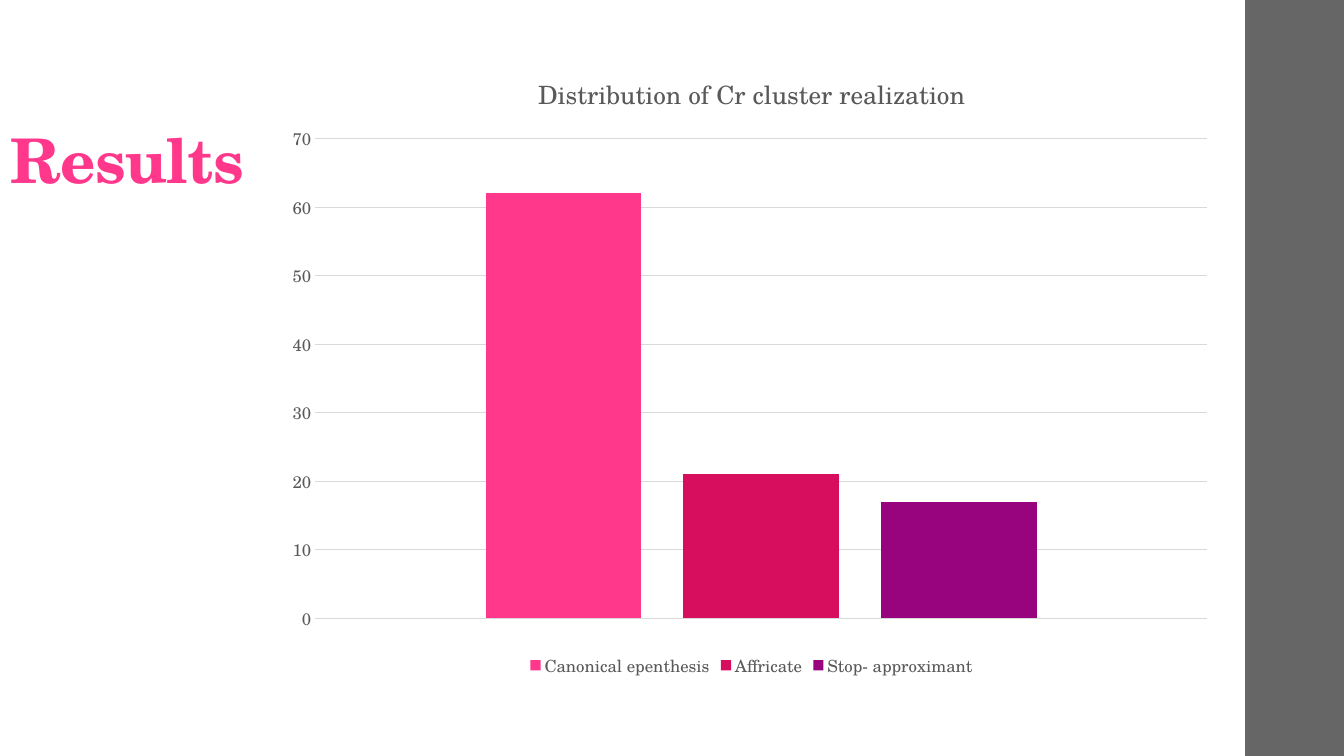
from lxml import etree
from pptx import Presentation
from pptx.chart.data import CategoryChartData
from pptx.dml.color import RGBColor
from pptx.enum.chart import XL_CHART_TYPE, XL_LEGEND_POSITION, XL_TICK_MARK
from pptx.enum.shapes import MSO_SHAPE
from pptx.enum.text import MSO_ANCHOR, MSO_AUTO_SIZE, PP_ALIGN
from pptx.oxml.ns import qn
from pptx.util import Inches, Pt

COLUMNS = XL_CHART_TYPE.COLUMN_CLUSTERED
LEGEND_BOTTOM = XL_LEGEND_POSITION.BOTTOM
NO_TICKS = XL_TICK_MARK.NONE
RECTANGLE = MSO_SHAPE.RECTANGLE

TITLE = "Results"
CHART_TITLE = "Distribution of Cr cluster realization"
CATEGORY = "1"
REALIZATIONS = [
    ("Canonical epenthesis", 62, "FF388C"),
    ("Affricate", 21, "D70D5E"),
    ("Stop- approximant", 17, "98037E"),
]

THEME = {
    "font": "TeX Gyre Schola",
    "title": "FF388C", "text": "595959", "grid": "D9D9D9", "sidebar": "666666",
    "title_size": 44, "chart_title_size": 18, "label_size": 12,
}
SLIDE_SIZE = (13.33, 7.5)
TITLE_BOX = (0, 0.44, 2.89, 1.56)
CHART_BOX = (2.75, 0.5, 9.41, 6.26)
SIDEBAR_BOX = (12.35, 0, 0.98, 7.5)
PLOT_SHARE = {"x": 0.04, "y": 0.14, "w": 0.94, "h": 0.76}  # fractions of the chart


def color(value):
    return RGBColor.from_string(value)


def set_format(target, formats):
    for name, value in formats.items():
        setattr(target, name, value)


def style_font(font, size, ink, bold=False):
    set_format(font, {"name": THEME["font"], "size": Pt(size), "bold": bold})
    font.color.rgb = color(ink)


def add_sidebar(page):
    sidebar = page.shapes.add_shape(RECTANGLE, *map(Inches, SIDEBAR_BOX))
    sidebar.shadow.inherit = False
    sidebar.fill.solid()
    sidebar.fill.fore_color.rgb = color(THEME["sidebar"])
    sidebar.line.fill.background()


def add_title(page):
    title = page.shapes.title
    sides = ("left", "top", "width", "height")
    set_format(title, dict(zip(sides, map(Inches, TITLE_BOX))))
    frame = title.text_frame
    set_format(frame, {
        "word_wrap": True, "auto_size": MSO_AUTO_SIZE.NONE,
        "vertical_anchor": MSO_ANCHOR.BOTTOM,
        "margin_left": Inches(0.1), "margin_right": Inches(0.1),
        "margin_top": Inches(0.03), "margin_bottom": Inches(0.05),
    })
    para = frame.paragraphs[0]
    set_format(para, {"alignment": PP_ALIGN.LEFT, "line_spacing": 0.9})
    span = para.add_run()
    span.text = TITLE
    style_font(span.font, THEME["title_size"], THEME["title"], bold=True)
    span.font._element.set("spc", "-50")


def place_plot(chart):
    """Fix the inner plot area at PLOT_SHARE of the chart."""
    area = chart._chartSpace.chart.plotArea
    for old in area.findall(qn("c:layout")):
        area.remove(old)
    layout = etree.Element(qn("c:layout"))
    area.insert(0, layout)
    manual = etree.SubElement(layout, qn("c:manualLayout"))
    settings = {"layoutTarget": "inner", "xMode": "edge", "yMode": "edge", **PLOT_SHARE}
    for name, value in settings.items():
        etree.SubElement(manual, qn(f"c:{name}")).set("val", str(value))


def add_chart(page):
    data = CategoryChartData()
    data.categories = [CATEGORY]
    for name, value, _ in REALIZATIONS:
        data.add_series(name, [value])
    chart = page.shapes.add_chart(COLUMNS, *map(Inches, CHART_BOX), data).chart
    style_font(chart.font, THEME["label_size"], THEME["text"])

    heading = chart.chart_title
    heading.include_in_layout = False
    heading.text_frame.text = CHART_TITLE
    span = heading.text_frame.paragraphs[0].runs[0]
    style_font(span.font, THEME["chart_title_size"], THEME["text"])

    chart.has_legend = True
    set_format(chart.legend, {"position": LEGEND_BOTTOM, "include_in_layout": False})
    style_font(chart.legend.font, THEME["label_size"], THEME["text"])

    chart.category_axis.visible = False
    axis = chart.value_axis
    set_format(axis, {
        "minimum_scale": 0, "maximum_scale": 70, "major_unit": 10,
        "major_tick_mark": NO_TICKS, "minor_tick_mark": NO_TICKS,
    })
    axis.format.line.fill.background()
    style_font(axis.tick_labels.font, THEME["label_size"], THEME["text"])
    grid = axis.major_gridlines.format.line
    grid.width = Pt(0.75)
    grid.color.rgb = color(THEME["grid"])

    plot = chart.plots[0]
    set_format(plot, {"gap_width": 219, "overlap": -27, "vary_by_categories": False})
    for series, (_, _, fill) in zip(plot.series, REALIZATIONS):
        series.format.fill.solid()
        series.format.fill.fore_color.rgb = color(fill)
    place_plot(chart)


def main():
    deck = Presentation()
    deck.slide_width, deck.slide_height = map(Inches, SLIDE_SIZE)
    page = deck.slides.add_slide(deck.slide_layouts[5])
    add_sidebar(page)
    add_title(page)
    add_chart(page)
    deck.save("out.pptx")


if __name__ == "__main__":
    main()
